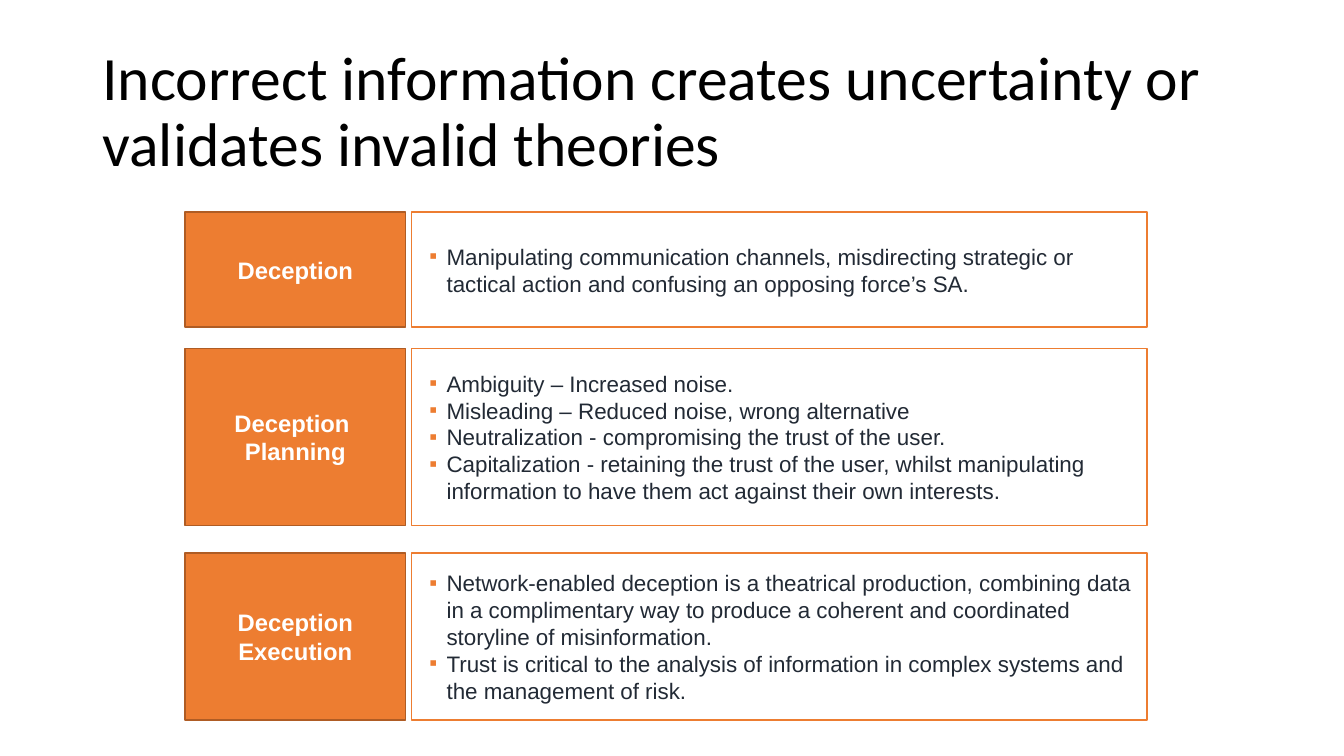
from lxml import etree
from pptx import Presentation
from pptx.dml.color import RGBColor
from pptx.enum.shapes import MSO_SHAPE
from pptx.enum.text import MSO_ANCHOR, MSO_AUTO_SIZE, PP_ALIGN
from pptx.oxml.ns import qn
from pptx.util import Inches, Pt

RECTANGLE = MSO_SHAPE.RECTANGLE
MIDDLE = MSO_ANCHOR.MIDDLE
LEFT, CENTER = PP_ALIGN.LEFT, PP_ALIGN.CENTER
NO_AUTOFIT = MSO_AUTO_SIZE.NONE

COLORS = {"orange": "ED7D31", "rust": "AF5C24", "white": "FFFFFF",
          "black": "000000", "ink": "222A35"}
TITLE_ONLY = 5

# Left and width of the two columns, in percent of the slide width
LABEL_COLUMN = (13.76, 16.43)
DETAIL_COLUMN = (30.6, 54.75)

# Top and height in percent of the slide height, label lines, bullets
STAGES = [
    (28.07, 15.2, ["Deception"],
     ["Manipulating communication channels, misdirecting strategic or "
      "tactical action and confusing an opposing force’s SA."]),
    (46.07, 23.47, ["Deception ", "Planning"],
     ["Ambiguity – Increased noise.",
      "Misleading – Reduced noise, wrong alternative",
      "Neutralization - compromising the trust of the user.",
      "Capitalization - retaining the trust of the user, whilst manipulating "
      "information to have them act against their own interests."]),
    (73.13, 22.13, ["Deception", "Execution"],
     ["Network-enabled deception is a theatrical production, combining data "
      "in a complimentary way to produce a coherent and coordinated "
      "storyline of misinformation.",
      "Trust is critical to the analysis of information in complex systems "
      "and the management of risk."]),
]


def rgb(name):
    return RGBColor.from_string(COLORS[name])


class SlideBuilder:
    """Holds the deck, its style and the current slide."""

    heading_font, body_font = "Calibri", "Arial"

    def __init__(self):
        self.deck = Presentation()
        self.deck.slide_width, self.deck.slide_height = Inches(13.33), Inches(7.5)
        self.page = self.deck.slides.add_slide(self.deck.slide_layouts[TITLE_ONLY])

    def frame(self, left, top, width, height):
        across, down = self.deck.slide_width / 100, self.deck.slide_height / 100
        return (round(left * across), round(top * down),
                round(width * across), round(height * down))

    def fill_text(self, box, lines, font, size, color, align, bold=False):
        text_frame = box.text_frame
        text_frame.text = "\n".join(lines)
        text_frame.word_wrap = True
        text_frame.auto_size = NO_AUTOFIT
        text_frame.vertical_anchor = MIDDLE
        for para in text_frame.paragraphs:
            para.alignment = align
            for span in para.runs:
                span.font.name, span.font.size = font, Pt(size)
                span.font.bold = bold
                span.font.color.rgb = rgb(color)
        return text_frame

    def title(self, text, left, top, width, height):
        box = self.page.shapes.title
        box.left, box.top, box.width, box.height = self.frame(left, top, width, height)
        text_frame = self.fill_text(box, [text], self.heading_font, 44, "black", LEFT)
        text_frame.paragraphs[0].line_spacing = 0.9

    def rectangle(self, column, top, height, fill, line):
        left, width = column
        box = self.page.shapes.add_shape(
            RECTANGLE, *self.frame(left, top, width, height))
        box.shadow.inherit = False
        box.fill.solid()
        box.fill.fore_color.rgb = rgb(fill)
        box.line.color.rgb = rgb(line)
        box.line.width = Pt(1)
        return box

    def label(self, lines, top, height):
        box = self.rectangle(LABEL_COLUMN, top, height, "orange", "rust")
        text_frame = self.fill_text(box, lines, self.body_font, 17, "white", CENTER, True)
        text_frame.margin_left = text_frame.margin_right = Inches(0.05)

    def details(self, lines, top, height):
        box = self.rectangle(DETAIL_COLUMN, top, height, "white", "orange")
        text_frame = self.fill_text(box, lines, self.body_font, 16, "ink", LEFT)
        text_frame.margin_left, text_frame.margin_right = Inches(0.18), Inches(0.05)
        text_frame.margin_top = text_frame.margin_bottom = Inches(0.09)
        for para in text_frame.paragraphs:
            self.bullet(para)

    def bullet(self, para):
        properties = para._p.get_or_add_pPr()
        properties.set("marL", str(Inches(0.17)))
        properties.set("indent", str(Inches(-0.17)))
        color = etree.SubElement(properties, qn("a:buClr"))
        etree.SubElement(color, qn("a:srgbClr"), val=COLORS["orange"])
        etree.SubElement(properties, qn("a:buFont"), typeface=self.body_font)
        etree.SubElement(properties, qn("a:buChar"), char="▪")


def main():
    builder = SlideBuilder()

    # Title
    builder.title("Incorrect information creates uncertainty or "
                  "validates invalid theories", 6.88, 5.33, 86.25, 19.33)

    # One row per stage: label and bullet list
    for top, height, label_lines, bullets in STAGES:
        builder.label(label_lines, top, height)
        builder.details(bullets, top, height)

    builder.deck.save("out.pptx")


if __name__ == "__main__":
    main()
